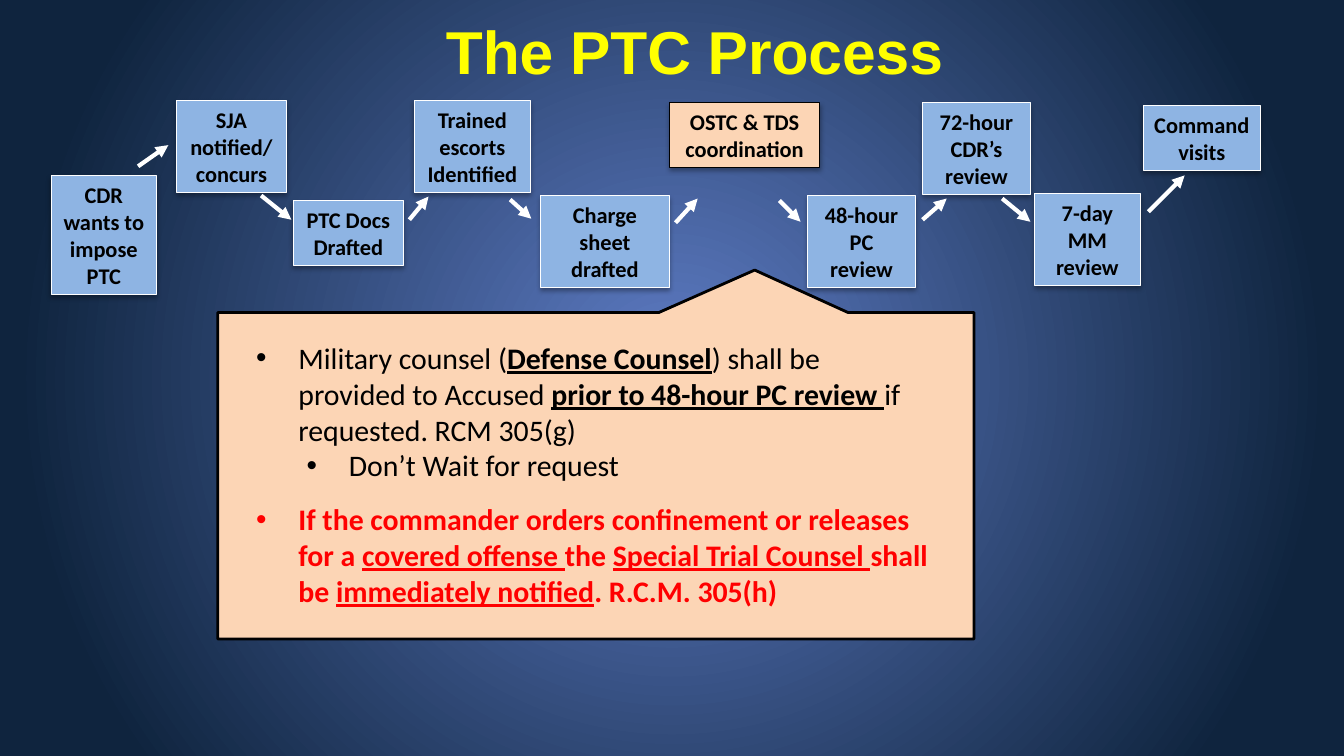
from lxml import etree
from pptx import Presentation
from pptx.dml.color import RGBColor
from pptx.enum.shapes import MSO_CONNECTOR, MSO_SHAPE
from pptx.enum.text import MSO_ANCHOR, MSO_AUTO_SIZE, PP_ALIGN
from pptx.oxml import parse_xml
from pptx.oxml.ns import nsdecls, qn
from pptx.util import Inches, Pt

GLOW = RGBColor(0x5E, 0x7C, 0xC5)
NAVY = RGBColor(0x0F, 0x24, 0x3E)
BLUE = RGBColor(0x8E, 0xB4, 0xE3)
PEACH = RGBColor(0xFC, 0xD5, 0xB5)
YELLOW = RGBColor(0xFF, 0xFF, 0x00)
RED = RGBColor(0xFF, 0x00, 0x00)
WHITE = RGBColor(0xFF, 0xFF, 0xFF)
BLACK = RGBColor(0x00, 0x00, 0x00)

deck = Presentation()
deck.slide_width, deck.slide_height = Inches(13.33), Inches(7.5)
page = deck.slides.add_slide(deck.slide_layouts[1])

backdrop = page.background.fill
backdrop.gradient()
for stop, position, color in zip(backdrop.gradient_stops, (0, 0.85), (GLOW, NAVY)):
    stop.position = position
    stop.color.rgb = color
linear = page.element.find(".//" + qn("a:lin"))
linear.getparent().replace(linear, parse_xml(
    f'<a:path {nsdecls("a")} path="circle">'
    '<a:fillToRect l="50000" t="50000" r="50000" b="50000"/></a:path>'))

title = page.shapes.title
title.left, title.top, title.width, title.height = map(Inches, (0.77, 0.08, 12.24, 0.83))
title.text_frame.auto_size = MSO_AUTO_SIZE.NONE
title.text_frame.vertical_anchor = MSO_ANCHOR.MIDDLE
title.text_frame.text = "The PTC Process"
para = title.text_frame.paragraphs[0]
para.alignment = PP_ALIGN.CENTER
para.font.name, para.font.size, para.font.bold = "Arial", Pt(43.2), True
para.font.color.rgb = YELLOW

callout = page.shapes.add_shape(
    MSO_SHAPE.RECTANGULAR_CALLOUT, Inches(2.16), Inches(3.1), Inches(7.5), Inches(3.24))
callout.rotation = 180
callout.adjustments[0], callout.adjustments[1] = -0.21, 0.63
callout.shadow.inherit = False
callout.fill.solid()
callout.fill.fore_color.rgb = PEACH
callout.line.color.rgb = BLACK
callout.line.width = Pt(2)
title.element.addprevious(callout.element)

notes = [
    (0, 0.42, 0, BLACK, False, [
        ("Military counsel (", False), ("Defense Counsel", True),
        (") shall be provided to Accused ", False),
        ("prior to 48-hour PC review ", True), ("if requested. RCM 305(g)", False)]),
    (1, 0.92, 0, BLACK, False, [("Don’t Wait for request", False)]),
    (0, 0.42, 13, RED, True, [
        ("If the commander orders confinement or releases for a ", False),
        ("covered offense ", True), ("the ", False), ("Special Trial Counsel ", True),
        ("shall be ", False), ("immediately notified", True),
        (". R.C.M. 305(h)", False)]),
]
body = page.placeholders[1]
body.left, body.top, body.width, body.height = map(Inches, (2.44, 3.32, 6.92, 2.79))
frame = body.text_frame
frame.auto_size = MSO_AUTO_SIZE.NONE
for index, (level, indent, gap, color, bold, spans) in enumerate(notes):
    para = frame.add_paragraph() if index else frame.paragraphs[0]
    para.level = level
    para.space_before = Pt(gap)
    properties = para._p.get_or_add_pPr()
    properties.set("marL", str(Inches(indent)))
    properties.set("indent", str(Inches(-0.42)))
    etree.SubElement(properties, qn("a:buFont"), typeface="Arial")
    etree.SubElement(properties, qn("a:buChar"), char="•")
    para.font.name, para.font.size = "Calibri", Pt(21.3)
    para.font.color.rgb = color
    for text, marked in spans:
        span = para.add_run()
        span.text = text
        span.font.bold = bold or marked
        span.font.underline = marked

steps = [
    ("CDR wants to impose PTC", 0.51, 1.74, 1.04, 1.18),
    ("SJA notified/ concurs", 1.75, 1, 1.09, 0.91),
    ("PTC Docs\nDrafted", 2.91, 1.99, 1.09, 0.64),
    ("Trained escorts Identified", 4.11, 1, 1.15, 0.91),
    ("Charge sheet drafted", 5.36, 1.94, 1.28, 0.91),
    ("OSTC & TDS coordination", 6.64, 1.02, 1.49, 0.64),
    ("48-hour PC review", 8.01, 1.94, 1.07, 0.91),
    ("72-hour CDR’s review", 9.15, 1.02, 1.07, 0.91),
    ("7-day MM review", 10.26, 1.92, 1.05, 0.91),
    ("Command visits", 11.34, 1.05, 1.16, 0.64),
]
for text, *place in steps:
    current = text.startswith("OSTC")
    box = page.shapes.add_shape(MSO_SHAPE.RECTANGLE, *map(Inches, place))
    box.fill.solid()
    box.fill.fore_color.rgb = PEACH if current else BLUE
    box.line.color.rgb = BLACK if current else WHITE
    box.line.width = Pt(0.75)
    box.shadow.inherit = False
    box.element.spPr.find(qn("a:effectLst")).append(parse_xml(
        f'<a:outerShdw {nsdecls("a")} blurRad="{Pt(3.5)}" dist="{Pt(2.2)}" dir="5400000" '
        'rotWithShape="0"><a:srgbClr val="000000"><a:alpha val="32000"/></a:srgbClr>'
        '</a:outerShdw>'))
    frame = box.text_frame
    frame.word_wrap = True
    frame.margin_left = frame.margin_right = Inches(0.09)
    frame.text = text
    for para in frame.paragraphs:
        para.alignment = PP_ALIGN.CENTER
        para.font.name, para.font.size, para.font.bold = "Calibri", Pt(16), True
        para.font.color.rgb = BLACK

arrows = [
    (1.37, 1.65, 1.67, 1.44),
    (2.59, 1.94, 2.89, 2.18),
    (4.06, 2.18, 4.25, 1.95),
    (5.06, 1.98, 5.27, 2.17),
    (6.7, 2.21, 6.92, 1.97),
    (7.73, 1.99, 7.94, 2.2),
    (9.15, 2.18, 9.39, 1.97),
    (9.94, 1.97, 10.22, 2.2),
    (11.39, 2.1, 11.75, 1.74),
]
for ends in arrows:
    arrow = page.shapes.add_connector(MSO_CONNECTOR.STRAIGHT, *map(Inches, ends))
    arrow.line.color.rgb = WHITE
    arrow.line.width = Pt(3)
    etree.SubElement(arrow.line._get_or_add_ln(), qn("a:tailEnd"), type="triangle")
    etree.SubElement(arrow._element.spPr, qn("a:effectLst"))

deck.save("out.pptx")
